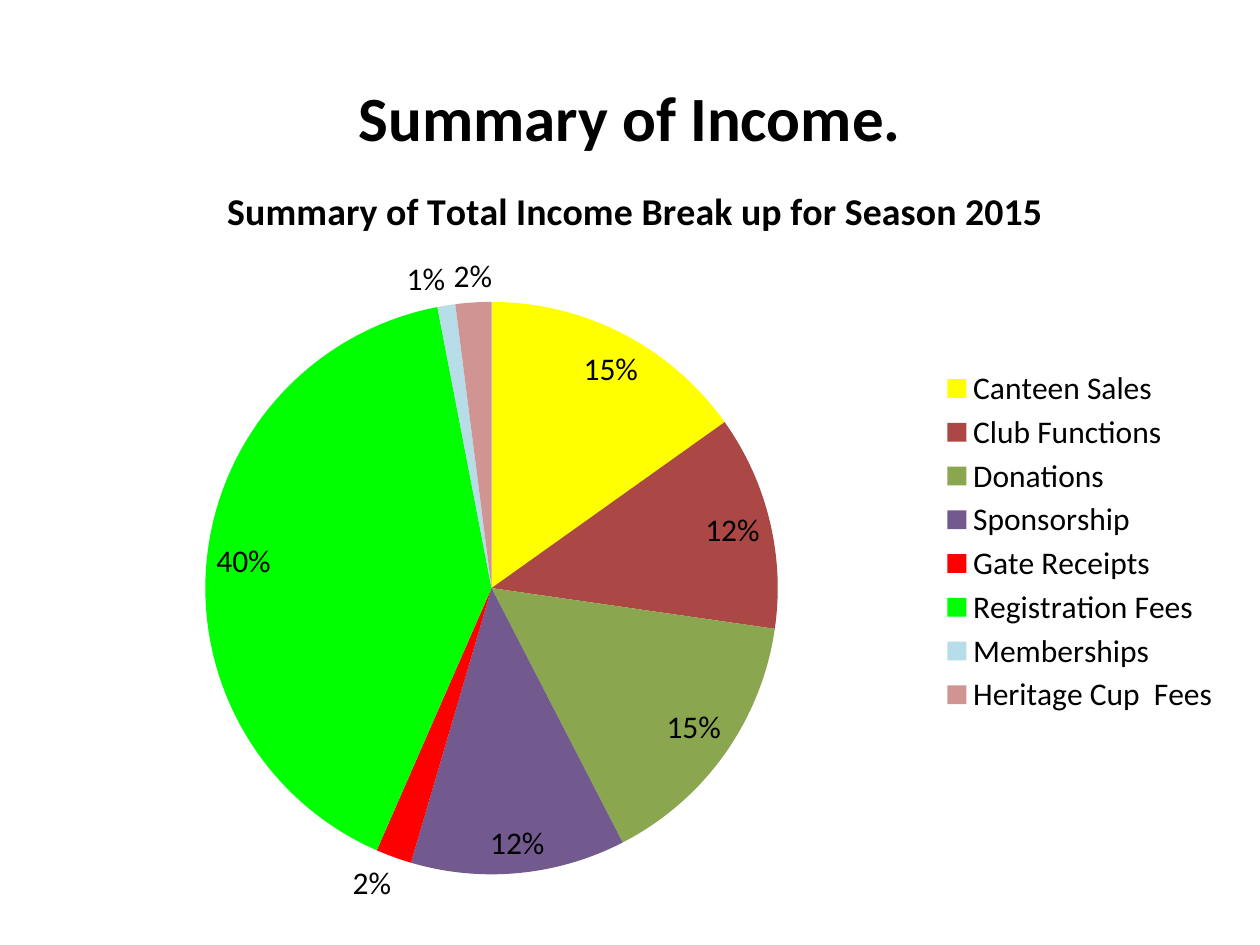
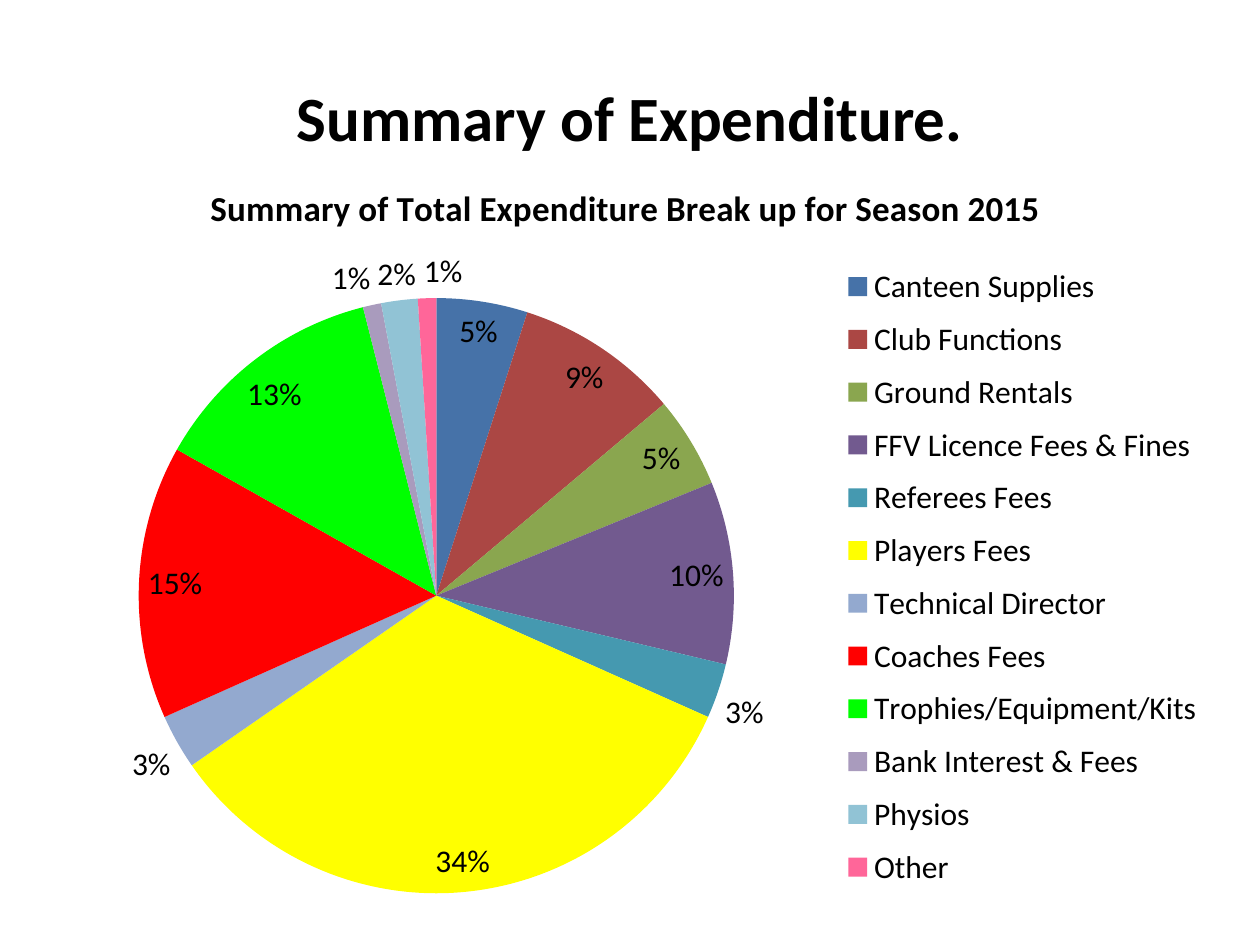
from lxml import etree
from pptx import Presentation
from pptx.chart.data import CategoryChartData
from pptx.dml.color import RGBColor
from pptx.enum.chart import XL_CHART_TYPE, XL_LABEL_POSITION, XL_LEGEND_POSITION
from pptx.enum.text import MSO_ANCHOR, PP_ALIGN
from pptx.oxml.ns import qn
from pptx.util import Inches, Pt

PIE = XL_CHART_TYPE.PIE
BEST_FIT = XL_LABEL_POSITION.BEST_FIT
RIGHT = XL_LEGEND_POSITION.RIGHT
MIDDLE = MSO_ANCHOR.MIDDLE
CENTER = PP_ALIGN.CENTER

BLACK = RGBColor(0x00, 0x00, 0x00)
WHITE = RGBColor(0xFF, 0xFF, 0xFF)
BLUE = RGBColor(0x46, 0x72, 0xA8)
BRICK = RGBColor(0xAB, 0x47, 0x44)
OLIVE = RGBColor(0x8A, 0xA6, 0x4F)
PURPLE = RGBColor(0x72, 0x5A, 0x8F)
TEAL = RGBColor(0x45, 0x99, 0xB0)
YELLOW = RGBColor(0xFF, 0xFF, 0x00)
RED = RGBColor(0xFF, 0x00, 0x00)
GREEN = RGBColor(0x00, 0xFF, 0x00)
PALE_BLUE = RGBColor(0xB7, 0xDE, 0xE8)
ROSE = RGBColor(0xD0, 0x94, 0x93)
PERIWINKLE = RGBColor(0x93, 0xA9, 0xCF)
LILAC = RGBColor(0xA9, 0x9B, 0xBD)
SKY = RGBColor(0x91, 0xC3, 0xD5)
PINK = RGBColor(0xFF, 0x66, 0x99)

INCOME = [
    ("Canteen Sales", 15, YELLOW),
    ("Club Functions", 12, BRICK),
    ("Donations", 15, OLIVE),
    ("Sponsorship", 12, PURPLE),
    ("Gate Receipts", 2, RED),
    ("Registration Fees", 40, GREEN),
    ("Memberships", 1, PALE_BLUE),
    ("Heritage Cup  Fees", 2, ROSE),
]
EXPENDITURE = [
    ("Canteen Supplies", 5, BLUE),
    ("Club Functions", 9, BRICK),
    ("Ground Rentals", 5, OLIVE),
    ("FFV Licence Fees & Fines", 10, PURPLE),
    ("Referees Fees", 3, TEAL),
    ("Players Fees", 34, YELLOW),
    ("Technical Director", 3, PERIWINKLE),
    ("Coaches Fees", 15, RED),
    ("Trophies/Equipment/Kits", 13, GREEN),
    ("Bank Interest & Fees", 1, LILAC),
    ("Physios", 2, SKY),
    ("Other", 1, PINK),
]


class SummaryDeck:
    FONT = "Calibri"
    WIDTH, HEIGHT = Inches(10), Inches(7.5)
    COLUMNS, ROWS = 100, 75
    HEADING_SIZE, CHART_SIZE = 36, 18

    def __init__(self):
        self.deck = Presentation()
        self.deck.slide_width, self.deck.slide_height = self.WIDTH, self.HEIGHT
        self.page = None

    def add_page(self):
        self.page = self.deck.slides.add_slide(self.deck.slide_layouts[6])
        fill = self.page.background.fill
        fill.solid()
        fill.fore_color.rgb = WHITE

    def frame(self, column, row, columns, rows):
        """Turn grid units into left, top, width and height."""
        across, down = self.WIDTH / self.COLUMNS, self.HEIGHT / self.ROWS
        return [round(n) for n in
                (column * across, row * down, columns * across, rows * down)]

    def style(self, font, size, bold=False):
        font.name, font.size, font.bold = self.FONT, Pt(size), bold
        font.color.rgb = BLACK

    def add_span(self, para, text, size):
        span = para.add_run()
        span.text = text
        self.style(span.font, size, bold=True)

    def add_heading(self, text):
        box = self.page.shapes.add_textbox(*self.frame(5, 3, 90, 12.5))
        box.text_frame.word_wrap = True
        box.text_frame.vertical_anchor = MIDDLE
        para = box.text_frame.paragraphs[0]
        para.alignment = CENTER
        self.add_span(para, text, self.HEADING_SIZE)

    def add_pie(self, place, title, title_size, slices, pie_area, legend_area):
        names, values, colours = zip(*slices)
        data = CategoryChartData()
        data.categories = names
        data.add_series("Series 1", values)
        chart = self.page.shapes.add_chart(PIE, *self.frame(*place), data).chart
        self.style(chart.font, self.CHART_SIZE)

        chart.has_title = True
        self.add_span(chart.chart_title.text_frame.paragraphs[0], title, title_size)
        chart.chart_title.include_in_layout = False

        chart.has_legend = True
        chart.legend.position = RIGHT
        chart.legend.include_in_layout = False

        plot = chart.plots[0]
        plot.vary_by_categories = True
        for index, colour in enumerate(colours):
            fill = plot.series[0].points[index].format.fill
            fill.solid()
            fill.fore_color.rgb = colour

        plot.has_data_labels = True
        labels = plot.data_labels
        labels.show_percentage, labels.show_value = True, False
        labels.number_format, labels.number_format_is_linked = "0%", False
        labels.position = BEST_FIT
        self.style(labels.font, self.CHART_SIZE)

        chart_root = chart.element.find(qn("c:chart"))
        self.set_layout(chart_root.find(qn("c:plotArea")), pie_area, inner=True)
        self.set_layout(chart_root.find(qn("c:legend")), legend_area)

    @staticmethod
    def set_layout(part, area, inner=False):
        """Place a chart part by shares of the chart's size."""
        layout = part.find(qn("c:layout"))
        if layout is None:
            layout = etree.Element(qn("c:layout"))
            position = part.find(qn("c:legendPos"))
            part.insert(0 if position is None else part.index(position) + 1, layout)
        manual = etree.SubElement(layout, qn("c:manualLayout"))
        settings = [("layoutTarget", "inner")] if inner else []
        settings += [("xMode", "edge"), ("yMode", "edge"), *zip("xywh", area)]
        for tag, value in settings:
            etree.SubElement(manual, qn("c:" + tag)).set("val", str(value))


def main():
    summary = SummaryDeck()

    summary.add_page()
    summary.add_heading("Summary of Income.")
    summary.add_pie((2.8, 12.3, 95.3, 61.4),
                    "Summary of Total Income Break up for Season 2015", 21.6,
                    INCOME, (0.14, 0.19, 0.48, 0.74), (0.75, 0.27, 0.24, 0.46))

    summary.add_page()
    summary.add_heading("Summary of Expenditure.")
    summary.add_pie((1.2, 12.3, 96.9, 59.8),
                    "Summary of Total Expenditure Break up for Season 2015", 20,
                    EXPENDITURE, (0.1, 0.19, 0.49, 0.79), (0.67, 0.13, 0.31, 0.86))

    summary.deck.save("out.pptx")


if __name__ == "__main__":
    main()
